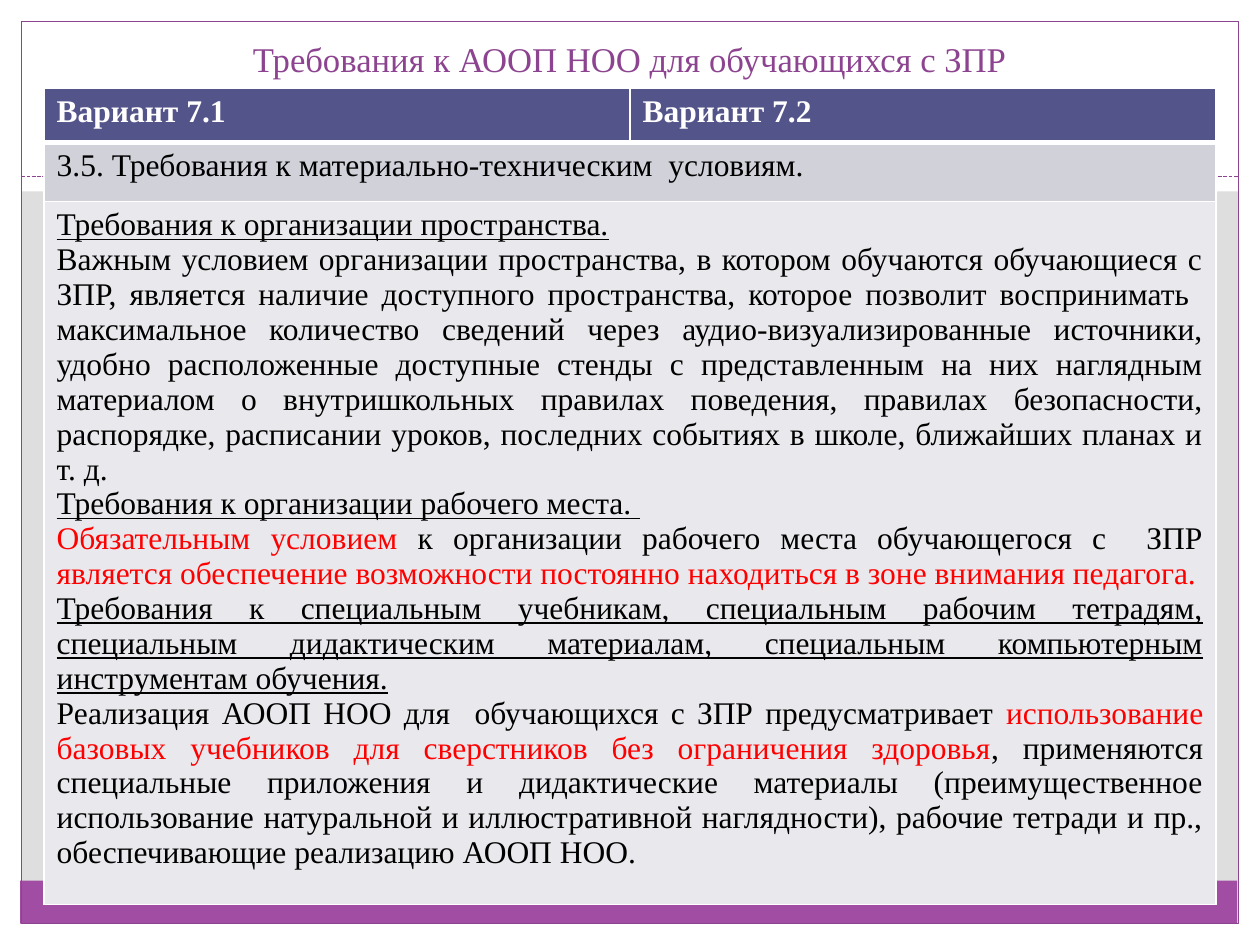
from lxml import etree
from pptx import Presentation
from pptx.dml.color import RGBColor
from pptx.enum.dml import MSO_LINE
from pptx.enum.shapes import MSO_CONNECTOR, MSO_SHAPE
from pptx.enum.text import MSO_ANCHOR, MSO_AUTO_SIZE, PP_ALIGN
from pptx.oxml.ns import qn
from pptx.util import Inches, Pt

WHITE = RGBColor(0xFF, 0xFF, 0xFF)
BLACK = RGBColor(0, 0, 0)
RED = RGBColor(0xFF, 0, 0)
GREY = RGBColor(0xDE, 0xDE, 0xDE)
PURPLE = RGBColor(0xA0, 0x4D, 0xA3)
DARK_PURPLE = RGBColor(0x8D, 0x44, 0x90)
INDIGO = RGBColor(0x53, 0x54, 0x8A)
SECTION_FILL = RGBColor(0xD1, 0xD1, 0xDA)
BODY_FILL = RGBColor(0xE9, 0xE9, 0xED)

# Each paragraph: underlined or not, then its (text, colour) runs
REQUIREMENTS = [
    (True, [("Требования к организации пространства.", BLACK)]),
    (False, [("Важным условием организации пространства, в котором обучаются "
              "обучающиеся с ЗПР, является наличие доступного пространства, "
              "которое позволит воспринимать  максимальное количество сведений "
              "через аудио-визуализированные источники, удобно расположенные "
              "доступные стенды с представленным на них наглядным материалом о "
              "внутришкольных правилах поведения, правилах безопасности, "
              "распорядке, расписании уроков, последних событиях в школе, "
              "ближайших планах и т. д. ", BLACK)]),
    (True, [("Требования к организации рабочего места. ", BLACK)]),
    (False, [("Обязательным условием", RED),
             (" к организации рабочего места обучающегося с  ЗПР ", BLACK),
             ("является обеспечение возможности постоянно находиться в зоне "
              "внимания педагога.", RED)]),
    (True, [("Требования к специальным учебникам, специальным рабочим тетрадям, "
             "специальным дидактическим материалам, специальным компьютерным "
             "инструментам обучения.", BLACK)]),
    (False, [("Реализация АООП НОО для  обучающихся с ЗПР предусматривает ", BLACK),
             ("использование базовых учебников для сверстников без ограничения "
              "здоровья", RED),
             (", применяются специальные приложения и дидактические материалы "
              "(преимущественное использование натуральной и иллюстративной "
              "наглядности), рабочие тетради и пр., обеспечивающие реализацию "
              "АООП НОО.", BLACK)]),
]


class SlideBuilder:
    font_name = "Times New Roman"
    text_size = 18

    def __init__(self, prs):
        self.slide = prs.slides.add_slide(prs.slide_layouts[5])
        fill = self.slide.background.fill
        fill.solid()
        fill.fore_color.rgb = GREY

    def font(self, run, color, size=text_size, bold=False, underline=False):
        f = run.font
        f.name, f.size, f.bold, f.underline = self.font_name, Pt(size), bold, underline
        f.color.rgb = color

    def rect(self, x, y, w, h, fill=None, line=None):
        sp = self.slide.shapes.add_shape(
            MSO_SHAPE.RECTANGLE, Inches(x), Inches(y), Inches(w), Inches(h))
        sp.shadow.inherit = False
        if fill is None:
            sp.fill.background()
        else:
            sp.fill.solid()
            sp.fill.fore_color.rgb = fill
        if line is None:
            sp.line.fill.background()
        else:
            sp.line.color.rgb = line
            sp.line.width = Pt(0.75)

    def dashed_line(self, x1, x2, y, color):
        cx = self.slide.shapes.add_connector(
            MSO_CONNECTOR.STRAIGHT, Inches(x1), Inches(y), Inches(x2), Inches(y))
        cx.line.color.rgb = color
        cx.line.width = Pt(0.75)
        cx.line.dash_style = MSO_LINE.SQUARE_DOT
        etree.SubElement(cx._element.spPr, qn("a:effectLst"))

    def title(self, text, x, y, w, h):
        sp = self.slide.shapes.title
        sp.left, sp.top, sp.width, sp.height = map(Inches, (x, y, w, h))
        tf = sp.text_frame
        tf.text = text
        tf.word_wrap = True
        tf.auto_size = MSO_AUTO_SIZE.NONE
        tf.vertical_anchor = MSO_ANCHOR.BOTTOM
        p = tf.paragraphs[0]
        p.alignment = PP_ALIGN.CENTER
        self.font(p.runs[0], DARK_PURPLE, 19.8)
        # Bring the title in front of the white bands
        self.slide.shapes._spTree.append(sp._element)

    def table(self, x, y, cols, rows):
        tbl = self.slide.shapes.add_table(
            len(rows), len(cols), Inches(x), Inches(y),
            Inches(sum(cols)), Inches(sum(rows))).table
        for column, width in zip(tbl.columns, cols):
            column.width = Inches(width)
        for row, height in zip(tbl.rows, rows):
            row.height = Inches(height)
        return tbl

    def cell(self, cell, paragraphs, fill, bold=False, align=PP_ALIGN.LEFT, bottom=1):
        tf = cell.text_frame
        for i, (underline, runs) in enumerate(paragraphs):
            p = tf.add_paragraph() if i else tf.paragraphs[0]
            p.alignment = align
            for text, color in runs:
                r = p.add_run()
                r.text = text
                self.font(r, color, bold=bold, underline=underline)
        self.borders(cell, bottom)
        cell.fill.solid()
        cell.fill.fore_color.rgb = fill

    def borders(self, cell, bottom):
        tc_pr = cell._tc.get_or_add_tcPr()
        for side, width in (("L", 1), ("R", 1), ("T", 1), ("B", bottom)):
            ln = etree.SubElement(tc_pr, qn(f"a:ln{side}"), w=str(Pt(width)))
            solid = etree.SubElement(ln, qn("a:solidFill"))
            etree.SubElement(solid, qn("a:srgbClr"), val=str(WHITE))


def main():
    prs = Presentation()
    prs.slide_width, prs.slide_height = Inches(10), Inches(7.5)
    s = SlideBuilder(prs)

    margin, inner = 0.17, 9.66
    for band in ((0, 7.33, 10, margin), (0, 0, 10, 1.52),
                 (0, 0, margin, 7.5), (9.83, 0, margin, 7.5)):
        s.rect(*band, fill=WHITE)
    s.rect(0.16, 6.99, inner, 0.34, fill=PURPLE)
    s.rect(margin, margin, inner, 7.16, line=DARK_PURPLE)
    s.dashed_line(margin, margin + inner, 1.4, DARK_PURPLE)
    s.title("Требования к АООП НОО для обучающихся с ЗПР", 0.33, 0.13, 9.33, 0.55)

    tbl = s.table(0.35, 0.7, cols=[4.65, 4.65], rows=[0.43, 0.47, 5.58])
    for col, heading in enumerate(("Вариант 7.1", "Вариант 7.2")):
        s.cell(tbl.cell(0, col), [(False, [(heading, WHITE)])], INDIGO,
               bold=True, bottom=3)
    for row in (1, 2):
        tbl.cell(row, 0).merge(tbl.cell(row, 1))
    section = "3.5. Требования к материально-техническим  условиям."
    s.cell(tbl.cell(1, 0), [(False, [(section, BLACK)])], SECTION_FILL)
    s.cell(tbl.cell(2, 0), REQUIREMENTS, BODY_FILL, align=PP_ALIGN.JUSTIFY)

    prs.save("out.pptx")


if __name__ == "__main__":
    main()
